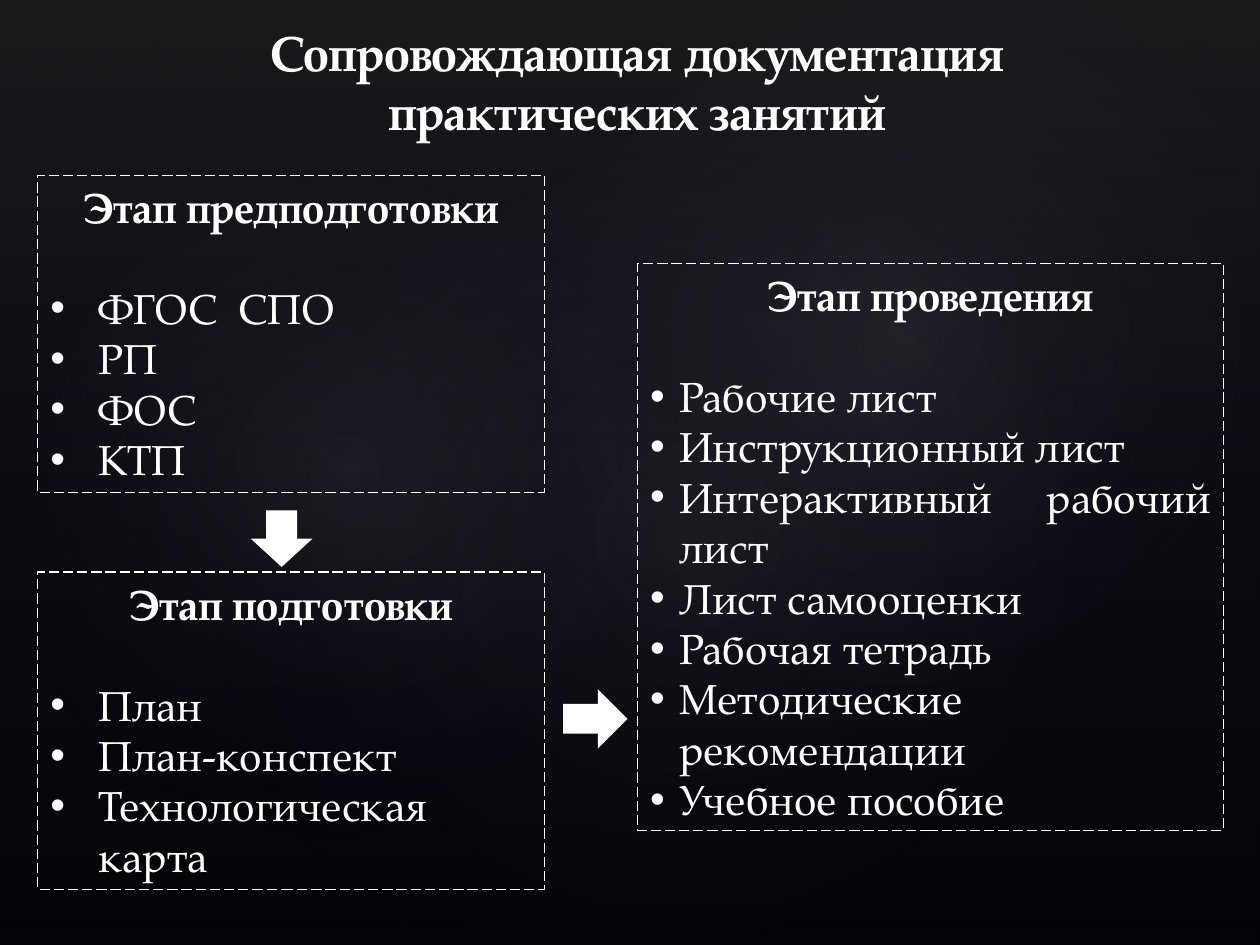
import dataclasses

import lxml.etree
import pptx
import pptx.dml.color
import pptx.enum.dml
import pptx.enum.shapes
import pptx.enum.text
import pptx.oxml.ns
import pptx.util

Inches = pptx.util.Inches
Shapes = pptx.enum.shapes.MSO_SHAPE
Align = pptx.enum.text.PP_ALIGN
Anchor = pptx.enum.text.MSO_ANCHOR
qn = pptx.oxml.ns.qn


@dataclasses.dataclass(frozen=True)
class Theme:
    font: str = "TeX Gyre Pagella"
    title_size: float = 28
    text_size: float = 24
    heading_gap: float = 28.8
    line_width: float = 0.75
    ink: str = "FFFFFF"
    background: str = "000000"
    veil: str = "504652"
    glow: str = "C4BCC6"
    depth: str = "242852"


THEME = Theme()

GLOWS = [
    ((1.5, 1.14, 7.92, 6.24), 328.7, 7),
    ((-0.3, 1.28, 6.06, 4.9), 294.3, 8),
    ((3.58, 0.13, 7.09, 5.2), 328.7, 8),
]

STAGES = [
    ((0.3, 1.39, 4.02, 2.52), 0.38, Align.LEFT, "Этап предподготовки",
     ["ФГОС  СПО", "РП", "ФОС", "КТП"]),
    ((0.3, 4.54, 4.02, 2.52), 0.38, Align.LEFT, "Этап подготовки",
     ["План", "План-конспект", "Технологическая карта"]),
    ((5.06, 2.09, 4.65, 4.5), 0.23, Align.JUSTIFY, "Этап проведения",
     ["Рабочие лист", "Инструкционный лист", "Интерактивный рабочий лист",
      "Лист самооценки", "Рабочая тетрадь", "Методические рекомендации",
      "Учебное пособие"]),
]

ARROWS = [
    (Shapes.DOWN_ARROW, (1.99, 4.05, 0.49, 0.45)),
    (Shapes.RIGHT_ARROW, (4.47, 5.47, 0.51, 0.47)),
]


def color(value):
    return pptx.dml.color.RGBColor.from_string(value)


def add_child(parent, tag, **attributes):
    return lxml.etree.SubElement(parent, qn(tag), attributes)


def add_plain_shape(page, kind, area):
    shape = page.shapes.add_shape(kind, *map(Inches, area))
    shape.shadow.inherit = False
    shape.line.fill.background()
    return shape


def add_backdrop(page, layer, kind, area, stops, rotation=0, radial=False):
    shape = add_plain_shape(page, kind, area)
    shape.rotation = rotation
    shape.fill.gradient()
    gradient = shape._element.spPr.find(qn("a:gradFill"))
    for child in list(gradient):
        gradient.remove(child)
    stop_list = add_child(gradient, "a:gsLst")
    for position, value, opacity in stops:
        stop = add_child(stop_list, "a:gs", pos=str(position * 1000))
        tint = add_child(stop, "a:srgbClr", val=value)
        add_child(tint, "a:alpha", val=str(opacity * 1000))
    if radial:
        circle = add_child(gradient, "a:path", path="circle")
        add_child(circle, "a:fillToRect", l="50000", t="50000", r="50000", b="50000")
    else:
        add_child(gradient, "a:lin", ang="5400000", scaled="0")
    page.shapes._spTree.insert(2 + layer, shape._element)


def place(box, area, anchor):
    box.left, box.top, box.width, box.height = map(Inches, area)
    frame = box.text_frame
    frame.word_wrap = True
    frame.auto_size = pptx.enum.text.MSO_AUTO_SIZE.NONE
    frame.vertical_anchor = anchor
    frame.margin_left = frame.margin_right = Inches(0.1)
    frame.margin_top = frame.margin_bottom = Inches(0.05)
    return frame


def write(para, text, size, align, bold=False, indent=0, gap=0):
    para.text = text
    para.alignment = align
    para.line_spacing = 1.0
    para.space_before = pptx.util.Pt(0)
    para.space_after = pptx.util.Pt(gap)
    properties = para._p.get_or_add_pPr()
    properties.set("marL", str(Inches(indent)))
    properties.set("indent", str(-Inches(indent)))
    if indent:
        add_child(properties, "a:buFont", typeface="Arial")
        add_child(properties, "a:buChar", char="•")
    else:
        add_child(properties, "a:buNone")
    para.font.name = THEME.font
    para.font.size = pptx.util.Pt(size)
    para.font.bold = bold
    para.font.color.rgb = color(THEME.ink)


def fill_stage(box, area, indent, align, heading, items):
    frame = place(box, area, Anchor.TOP)
    box.line.color.rgb = color(THEME.ink)
    box.line.width = pptx.util.Pt(THEME.line_width)
    box.line.dash_style = pptx.enum.dml.MSO_LINE.LONG_DASH
    write(frame.paragraphs[0], heading, THEME.text_size, Align.CENTER,
          bold=True, gap=THEME.heading_gap)
    for item in items:
        write(frame.add_paragraph(), item, THEME.text_size, align, indent=indent)


def add_arrow(page, kind, area):
    arrow = add_plain_shape(page, kind, area)
    arrow.fill.solid()
    arrow.fill.fore_color.rgb = color(THEME.ink)


def add_background(page):
    page.background.fill.solid()
    page.background.fill.fore_color.rgb = color(THEME.background)
    add_backdrop(page, 0, Shapes.RECTANGLE, (0, 0, 10, 7.5),
                 [(0, THEME.veil, 36), (100, THEME.depth, 10)])
    for layer, (area, rotation, opacity) in enumerate(GLOWS, start=1):
        add_backdrop(page, layer, Shapes.OVAL, area,
                     [(0, THEME.glow, opacity), (58, THEME.depth, 0)],
                     rotation, radial=True)


def main():
    deck = pptx.Presentation()
    deck.slide_width, deck.slide_height = Inches(10), Inches(7.5)
    page = deck.slides.add_slide(deck.slide_layouts.get_by_name("Comparison"))
    title, *bodies = page.placeholders
    add_background(page)
    frame = place(title, (1.61, 0.13, 6.89, 1.04), Anchor.TOP)
    write(frame.paragraphs[0], "Сопровождающая документация практических занятий",
          THEME.title_size, Align.CENTER, bold=True)
    for box, stage in zip(bodies, STAGES):
        fill_stage(box, *stage)
    for spare in bodies[len(STAGES):]:
        spare._element.getparent().remove(spare._element)
    for kind, area in ARROWS:
        add_arrow(page, kind, area)
    deck.save("out.pptx")


if __name__ == "__main__":
    main()
